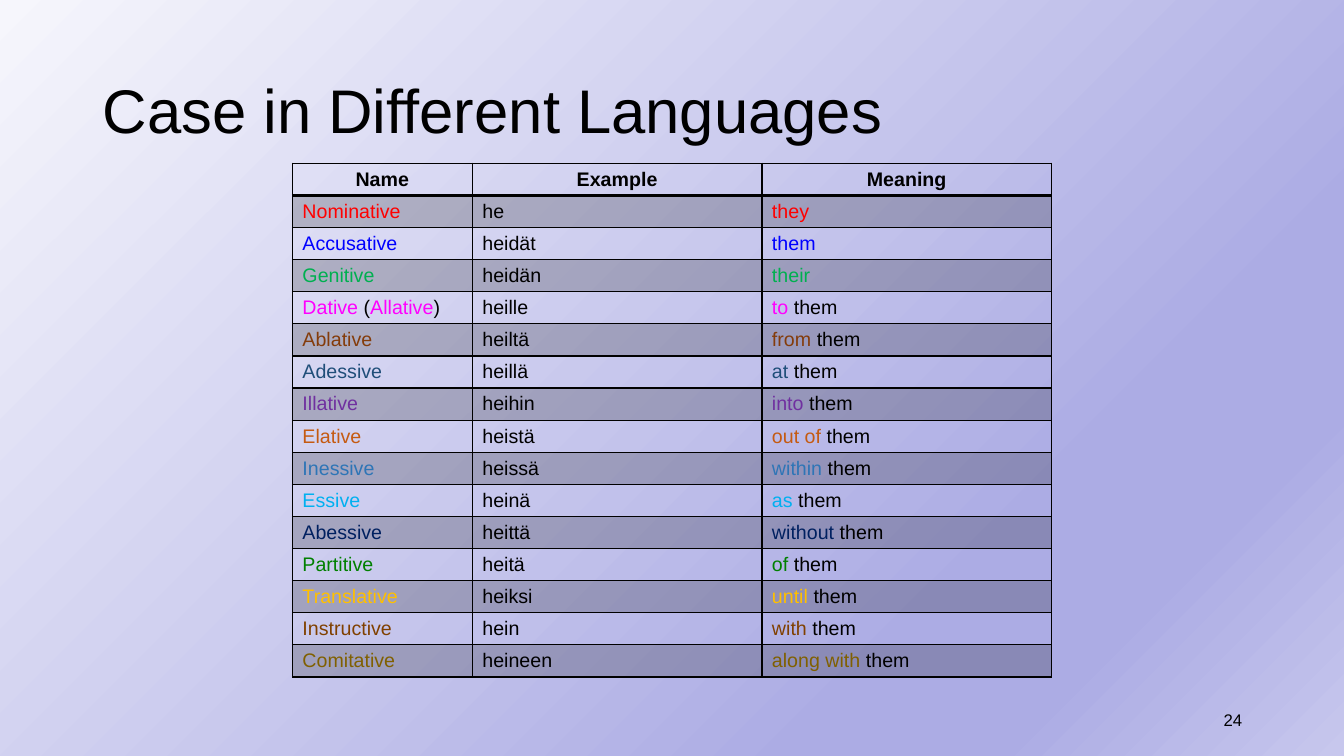
from dataclasses import dataclass

from lxml.etree import SubElement
from pptx import Presentation
from pptx.dml.color import RGBColor
from pptx.enum.text import MSO_ANCHOR, PP_ALIGN
from pptx.oxml.ns import qn
from pptx.util import Inches, Pt


@dataclass(frozen=True)
class Theme:
    font: str = "Arial"
    ink: str = "000000"
    title_size: int = 44
    table_size: int = 14
    number_size: int = 12
    band_alpha: int = 20
    rule: int = 1
    header_rule: int = 2
    background: tuple = ((0, "F6F6FC"), (74, "ACACE4"), (83, "ACACE4"), (100, "C7C7ED"))


THEME = Theme()
HEADER = ("Name", "Example", "Meaning")
COLUMN_SHARES = (0.237, 0.3815, 0.3815)

# Bars separate runs: the first is in the colour of the case, the next in ink, and so on.
CASES = (
    ("FF0000", "Nominative", "he", "they"),
    ("0000FF", "Accusative", "heidät", "them"),
    ("00B050", "Genitive", "heidän", "their"),
    ("FF00FF", "Dative| (|Allative|)", "heille", "to| them"),
    ("843C0B", "Ablative", "heiltä", "from| them"),
    ("1F4E79", "Adessive", "heillä", "at| them"),
    ("7030A0", "Illative", "heihin", "into| them"),
    ("C55A11", "Elative", "heistä", "out of| them"),
    ("2E75B6", "Inessive", "heissä", "within| them"),
    ("00B0F0", "Essive", "heinä", "as| them"),
    ("002060", "Abessive", "heittä", "without| them"),
    ("008000", "Partitive", "heitä", "of| them"),
    ("FFC000", "Translative", "heiksi", "until| them"),
    ("804000", "Instructive", "hein", "with| them"),
    ("806000", "Comitative", "heineen", "along with| them"),
)


def paint_background(s):
    fill = s.background.fill
    fill.gradient()
    fill.gradient_angle = 315
    stops = s.background._cSld.find(".//" + qn("a:gsLst"))
    for stop in list(stops):
        stops.remove(stop)
    for share, color in THEME.background:
        stop = SubElement(stops, qn("a:gs"), pos=str(share * 1000))
        SubElement(stop, qn("a:srgbClr"), val=color)


def write(p, text, size, color=THEME.ink, align=PP_ALIGN.LEFT, bold=False):
    """Fill a paragraph with runs that alternate between color and ink."""
    p.alignment = align
    p.font.name, p.font.size, p.font.bold = THEME.font, Pt(size), bold
    for i, part in enumerate(text.split("|")):
        r = p.add_run()
        r.text = part
        r.font.color.rgb = RGBColor.from_string(THEME.ink if i % 2 else color)


def add_text(s, box, text, size, align=PP_ALIGN.LEFT):
    tf = s.shapes.add_textbox(*map(Inches, box)).text_frame
    tf.word_wrap = True
    tf.vertical_anchor = MSO_ANCHOR.MIDDLE
    p = tf.paragraphs[0]
    p.line_spacing = 0.9
    write(p, text, size, align=align)


def style_cell(cell, banded, bottom_rule):
    cell.vertical_anchor = MSO_ANCHOR.MIDDLE
    cell.margin_top = cell.margin_bottom = Inches(0.04)
    if banded:
        cell.fill.solid()
        cell.fill.fore_color.rgb = RGBColor.from_string(THEME.ink)
        shade = cell._tc.tcPr.find(".//" + qn("a:srgbClr"))
        SubElement(shade, qn("a:alpha"), val=str(THEME.band_alpha * 1000))
    else:
        cell.fill.background()
    rules = {"L": THEME.rule, "R": THEME.rule, "T": THEME.rule, "B": bottom_rule}
    for i, (side, width) in enumerate(rules.items()):
        ln = SubElement(cell._tc.tcPr, qn(f"a:ln{side}"), w=str(Pt(width)))
        SubElement(SubElement(ln, qn("a:solidFill")), qn("a:srgbClr"), val=THEME.ink)
        cell._tc.tcPr.insert(i, ln)


def add_case_table(s, box):
    width, height = box[2:]
    count = len(CASES) + 1
    table = s.shapes.add_table(count, len(HEADER), *map(Inches, box)).table
    table.first_row = table.horz_banding = False
    for column, share in zip(table.columns, COLUMN_SHARES):
        column.width = Inches(width * share)
    for row in table.rows:
        row.height = Inches(height / count)

    for cell, text in zip(table.rows[0].cells, HEADER):
        style_cell(cell, False, THEME.header_rule)
        write(cell.text_frame.paragraphs[0], text, THEME.table_size,
              align=PP_ALIGN.CENTER, bold=True)
    for i, (color, *texts) in enumerate(CASES, start=1):
        colors = (color, THEME.ink, color)
        for cell, text, tint in zip(table.rows[i].cells, texts, colors):
            style_cell(cell, i % 2 == 1, THEME.rule)
            write(cell.text_frame.paragraphs[0], text, THEME.table_size, tint)


def main():
    prs = Presentation()
    prs.slide_width, prs.slide_height = Inches(13.33), Inches(7.5)
    s = prs.slides.add_slide(prs.slide_layouts[6])
    paint_background(s)
    add_text(s, (0.92, 0.4, 11.5, 1.45), "Case in Different Languages", THEME.title_size)
    add_case_table(s, (2.9, 1.62, 7.53, 5.1))
    add_text(s, (9.42, 6.95, 3, 0.4), "24", THEME.number_size, PP_ALIGN.RIGHT)
    prs.save("out.pptx")


if __name__ == "__main__":
    main()
